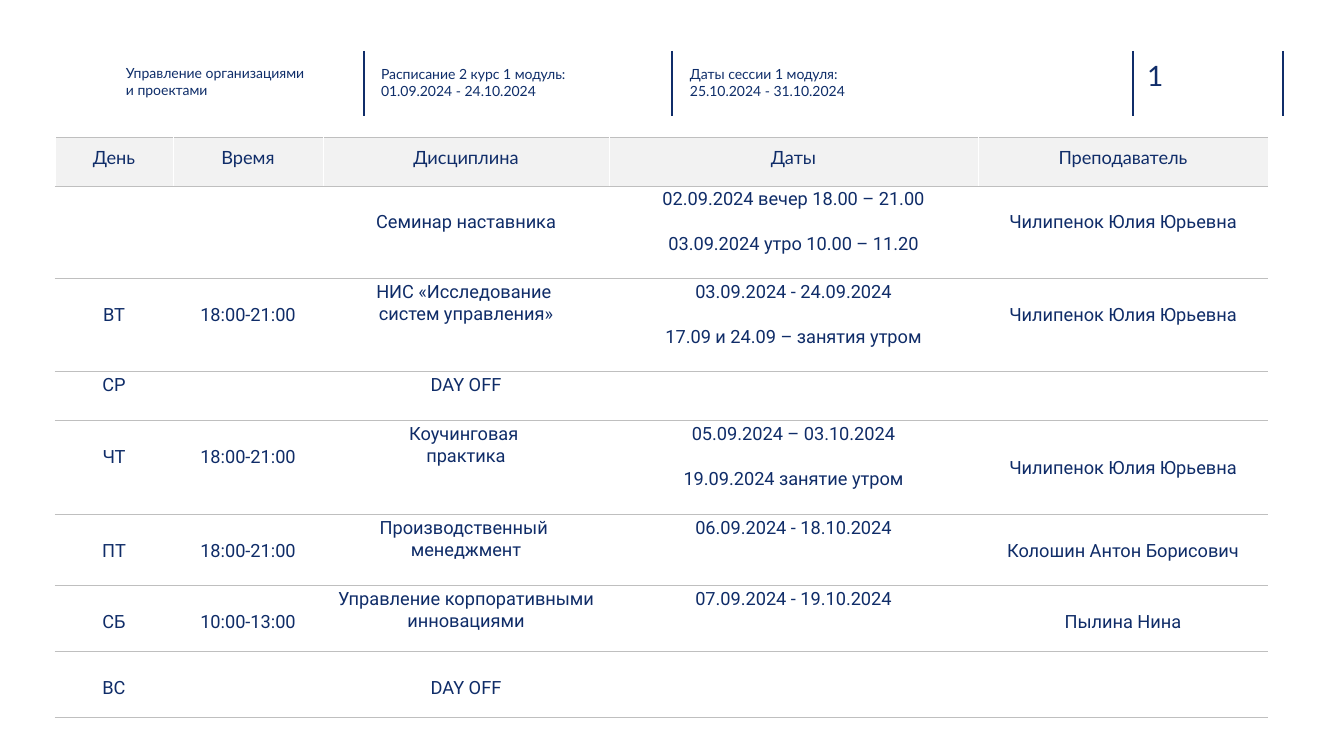
"""Build the weekly timetable slide of a management programme."""
from dataclasses import dataclass

from lxml import etree
from pptx import Presentation
from pptx.dml.color import RGBColor
from pptx.enum.shapes import MSO_CONNECTOR
from pptx.enum.text import MSO_ANCHOR, PP_ALIGN
from pptx.oxml.ns import qn
from pptx.util import Pt

STRAIGHT = MSO_CONNECTOR.STRAIGHT
TOP, MIDDLE = MSO_ANCHOR.TOP, MSO_ANCHOR.MIDDLE
LEFT, CENTER = PP_ALIGN.LEFT, PP_ALIGN.CENTER

LABELS = [
    (["Управление организациями и проектами"], (126, 59, 184, 45)),
    (["Расписание 2 курс 1 модуль: 01.09.2024 - 24.10.2024"], (381, 60, 228, 45)),
    (["Даты сессии 1 модуля:", "25.10.2024 - 31.10.2024"], (690, 60, 339, 45)),
]
PAGE_NUMBER = (["1"], (1147, 58, 74, 34))
DIVIDERS = [364, 672, 1133, 1283]
DIVIDER_TOP, DIVIDER_BOTTOM = 51, 116

TABLE_LEFT, TABLE_TOP = 55, 137
COLUMN_WIDTHS = [118, 150, 286, 369, 290]
ROW_HEIGHTS = [49, 93, 93, 49, 94, 71, 66, 66]
HEADINGS = ["День", "Время", "Дисциплина", "Даты", "Преподаватель"]
SCHEDULE = [
    ([], [], ["Семинар наставника"],
     ["02.09.2024 вечер 18.00 – 21.00", "03.09.2024 утро 10.00 – 11.20"],
     ["Чилипенок Юлия Юрьевна"]),
    (["ВТ"], ["18:00-21:00"], ["НИС «Исследование ", "систем управления»"],
     ["03.09.2024 - 24.09.2024", "17.09 и 24.09 – занятия утром"],
     ["Чилипенок Юлия Юрьевна"]),
    (["СР"], [], ["DAY OFF"], [], []),
    (["ЧТ"], ["18:00-21:00"], ["Коучинговая ", "практика"],
     ["05.09.2024 – 03.10.2024", "19.09.2024 занятие утром"],
     ["Чилипенок Юлия Юрьевна"]),
    (["ПТ"], ["18:00-21:00"], ["Производственный ", "менеджмент"],
     ["06.09.2024 - 18.10.2024"], ["Колошин Антон Борисович"]),
    (["СБ"], ["10:00-13:00"], ["Управление корпоративными инновациями"],
     ["07.09.2024 - 19.10.2024"], ["Пылина Нина"]),
    (["ВС"], [], ["DAY OFF"], [], []),
]
LINE_HEIGHT = 23
DATES_COLUMN = 3
USUAL_DROPS = [LINE_HEIGHT, LINE_HEIGHT, 0, 0, LINE_HEIGHT]
SPECIAL_DROPS = {(0, 2): LINE_HEIGHT, (2, 0): 0, (3, 4): 34, (6, 2): LINE_HEIGHT}


@dataclass(frozen=True)
class Theme:
    """Fonts, type sizes and colours of the slide."""
    heading_font: str = "Lato"
    body_font: str = "Roboto"
    label_size: int = 10
    table_size: int = 13
    number_size: int = 20
    navy: str = "102D69"
    label: str = "0E2D69"
    body: str = "0F2C68"
    header_fill: str = "F2F2F2"
    rule: str = "BFBFBF"
    white: str = "FFFFFF"


THEME = Theme()


def px(length):
    """Turn pixels into EMU."""
    return round(length * 914400 / 100.8)


def write(frame, lines, *, size, color, font=THEME.heading_font,
          align=LEFT, spacing=1.0, gap=0):
    """Fill a text frame with one paragraph per line."""
    for index, line in enumerate(lines):
        paragraph = frame.paragraphs[0] if index == 0 else frame.add_paragraph()
        paragraph.alignment = align
        paragraph.line_spacing = spacing
        if index and gap:
            paragraph.space_before = px(gap)
        run = paragraph.add_run()
        run.text = line
        run.font.name = font
        run.font.size = Pt(size)
        run.font.color.rgb = RGBColor.from_string(color)


def add_text(slide, lines, box, anchor, **text_format):
    """Place a text box without insets."""
    frame = slide.shapes.add_textbox(*map(px, box)).text_frame
    frame.word_wrap = True
    frame.vertical_anchor = anchor
    frame.margin_left = frame.margin_right = 0
    frame.margin_top = frame.margin_bottom = 0
    write(frame, lines, **text_format)


def add_divider(slide, x):
    """Draw one vertical line of the page header."""
    line = slide.shapes.add_connector(
        STRAIGHT, px(x), px(DIVIDER_TOP), px(x), px(DIVIDER_BOTTOM))
    line.line.color.rgb = RGBColor.from_string(THEME.navy)
    line.line.width = Pt(1)
    etree.SubElement(line._element.spPr, qn("a:effectLst"))


def set_borders(cell):
    """Give a cell thin white sides and grey rules above and below."""
    sides = [("a:lnL", THEME.white, 0.25), ("a:lnR", THEME.white, 0.25),
             ("a:lnT", THEME.rule, 0.75), ("a:lnB", THEME.rule, 0.75)]
    properties = cell._tc.get_or_add_tcPr()
    for position, (tag, color, width) in enumerate(sides):
        border = etree.Element(qn(tag), w=str(Pt(width)))
        fill = etree.SubElement(border, qn("a:solidFill"))
        etree.SubElement(fill, qn("a:srgbClr"), val=color)
        properties.insert(position, border)


def set_margins(cell, side, top):
    """Set the insets of a cell in pixels."""
    cell.margin_left = cell.margin_right = px(side)
    cell.margin_top, cell.margin_bottom = px(top), px(1)


def add_schedule(slide):
    """Draw the timetable."""
    table = slide.shapes.add_table(
        len(ROW_HEIGHTS), len(COLUMN_WIDTHS), px(TABLE_LEFT), px(TABLE_TOP),
        px(sum(COLUMN_WIDTHS)), px(sum(ROW_HEIGHTS))).table
    table.first_row = table.horz_banding = False
    for column, width in zip(table.columns, COLUMN_WIDTHS):
        column.width = px(width)
    for row, height in zip(table.rows, ROW_HEIGHTS):
        row.height = px(height)

    for column, heading in enumerate(HEADINGS):
        cell = table.cell(0, column)
        cell.fill.solid()
        cell.fill.fore_color.rgb = RGBColor.from_string(THEME.header_fill)
        set_margins(cell, 10, 10)
        write(cell.text_frame, [heading], size=THEME.table_size,
              color=THEME.navy, align=CENTER)

    for row, entries in enumerate(SCHEDULE):
        for column, lines in enumerate(entries):
            cell = table.cell(row + 1, column)
            cell.fill.background()
            drop = SPECIAL_DROPS.get((row, column), USUAL_DROPS[column])
            set_margins(cell, 1, 1 + drop if lines else 1)
            write(cell.text_frame, lines, size=THEME.table_size,
                  color=THEME.body, font=THEME.body_font, align=CENTER,
                  spacing=1.07, gap=LINE_HEIGHT if column == DATES_COLUMN else 0)

    for cell in table.iter_cells():
        set_borders(cell)


def main():
    """Assemble and save the slide."""
    presentation = Presentation()
    presentation.slide_width, presentation.slide_height = px(1344), px(756)
    slide = presentation.slides.add_slide(presentation.slide_layouts[6])
    for x in DIVIDERS:
        add_divider(slide, x)
    add_text(slide, *PAGE_NUMBER, TOP, size=THEME.number_size, color=THEME.navy)
    for lines, box in LABELS:
        add_text(slide, lines, box, MIDDLE, size=THEME.label_size, color=THEME.label)
    add_schedule(slide)
    presentation.save("out.pptx")


if __name__ == "__main__":
    main()
